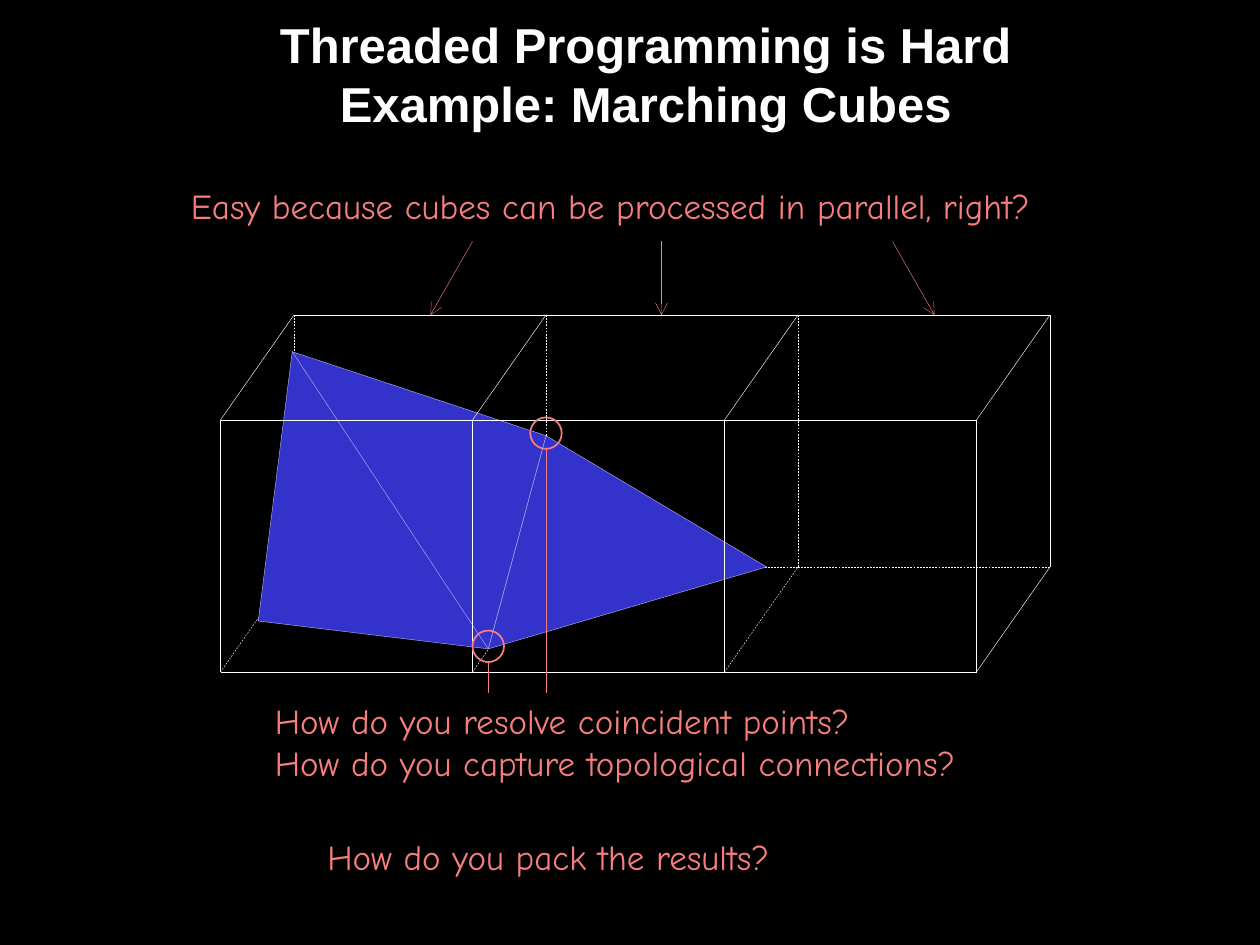
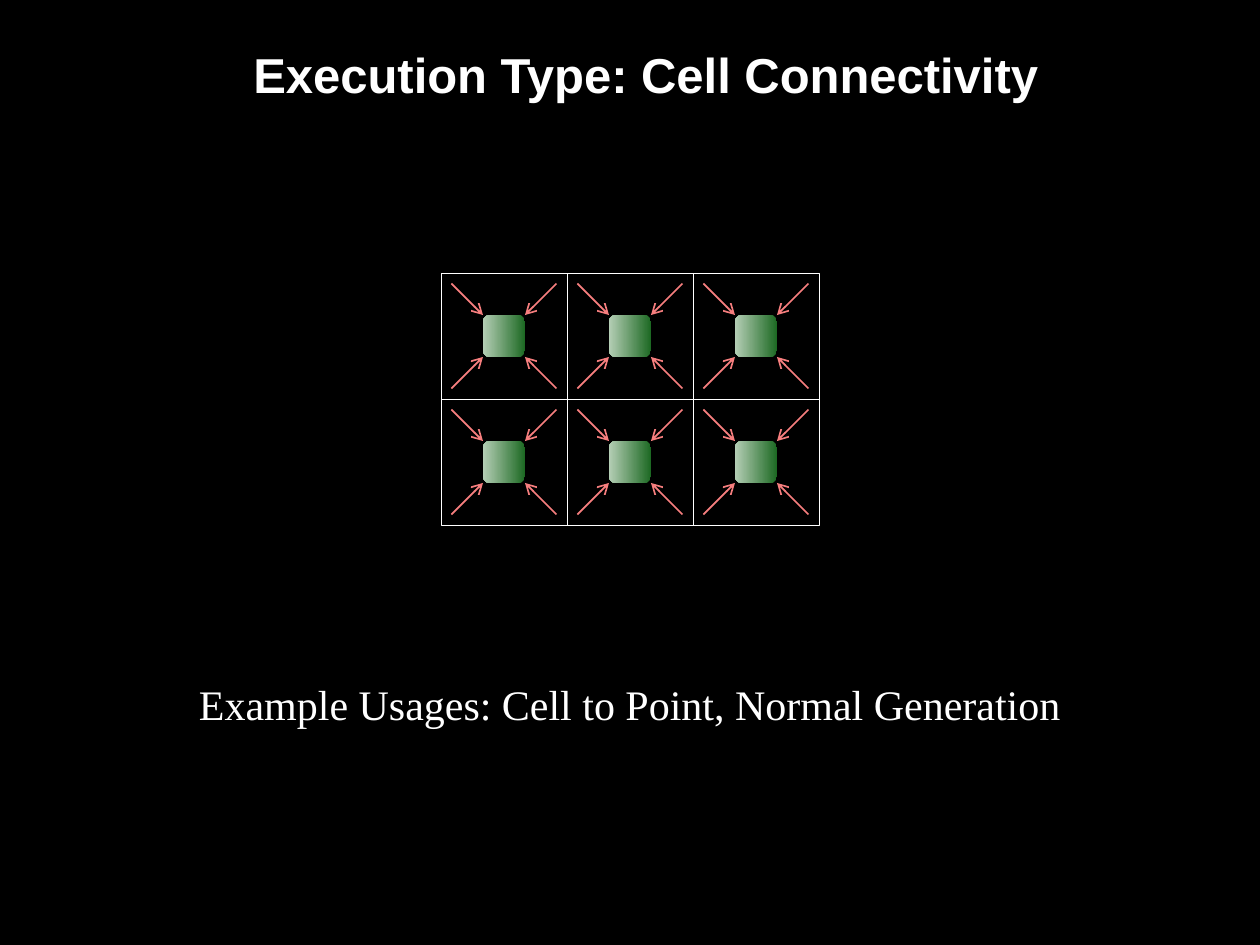
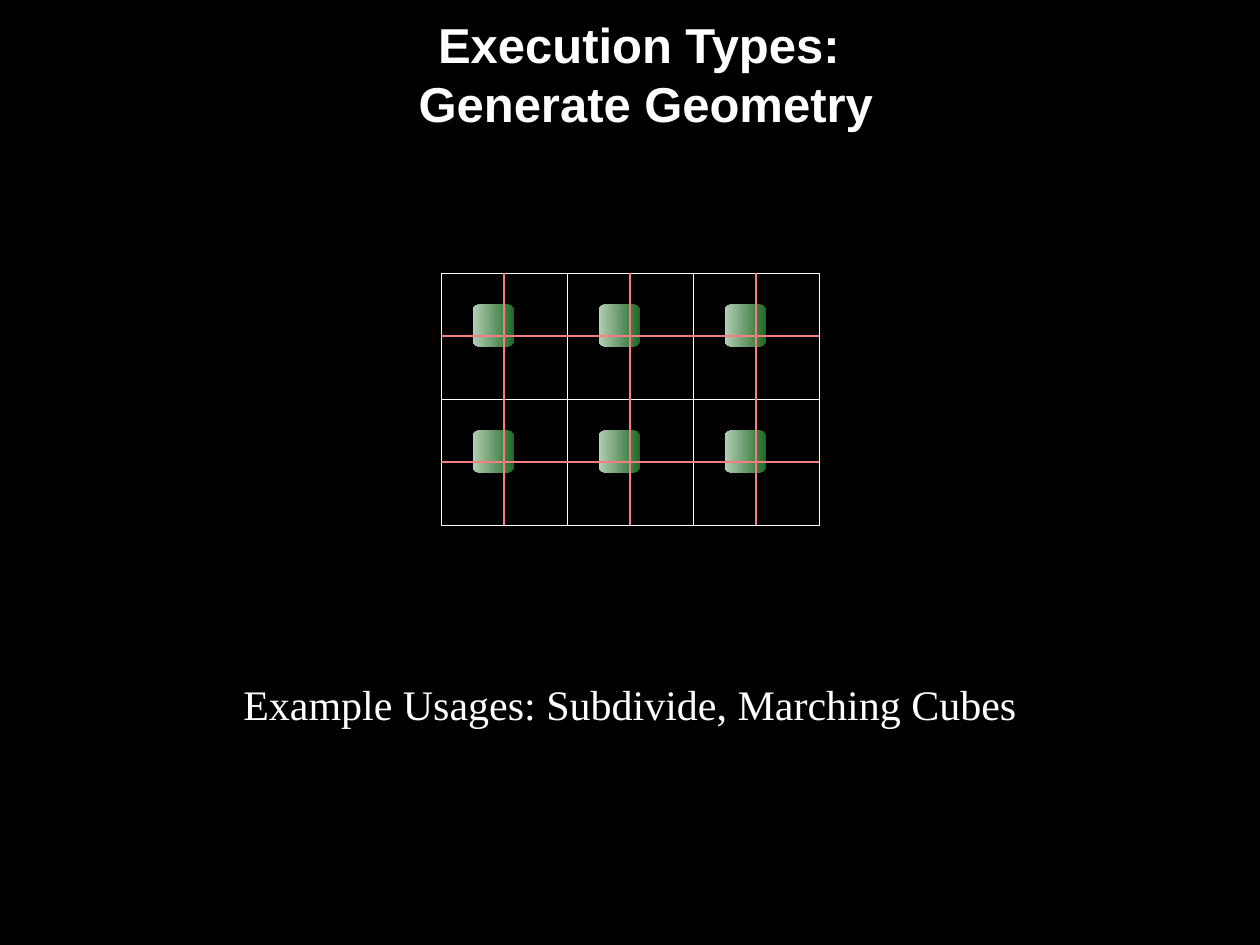
from dataclasses import dataclass
from itertools import product

from lxml import etree
from pptx import Presentation
from pptx import util as u
from pptx.dml.color import RGBColor
from pptx.enum import dml, shapes, text
from pptx.oxml import ns

SLIDE_W, SLIDE_H = u.Inches(10), u.Inches(7.5)
COLS, ROWS = 120, 90


@dataclass(frozen=True)
class Theme:
    background: str = "000000"
    ink: str = "FFFFFF"
    accent: str = "F67E7E"
    surface: str = "3333CC"
    surface_edge: str = "ADADEB"
    nucleus_dark: str = "1D6923"
    nucleus_light: str = "B4CEB5"
    title_font: str = "Arial"
    remark_font: str = "Comic Neue"
    usage_font: str = "Times New Roman"
    title_size: int = 28
    remark_size: int = 20
    usage_size: int = 24
    hairline: float = 0.25
    stroke: float = 1


THEME = Theme()


@dataclass(frozen=True)
class Box:
    col: float
    row: float
    width: float
    height: float

    def point(self, col, row):
        return (round((self.col + col) * SLIDE_W / COLS),
                round((self.row + row) * SLIDE_H / ROWS))

    def inner(self, col, row, width, height):
        return Box(self.col + col, self.row + row, width, height)

    def extent(self):
        return (*self.point(0, 0), round(self.width * SLIDE_W / COLS),
                round(self.height * SLIDE_H / ROWS))


TITLE = Box(20, 0, 83, 14)
CUBES = Box(21, 30, 79, 34)
CELLS = Box(42, 26, 36, 24)


def rgb(color):
    return RGBColor.from_string(color)


def add_xml(parent, tag, **attributes):
    return etree.SubElement(parent, ns.qn(tag), attributes)


def write(slide, box, words, *, font, size, color, bold=False, wrap=False,
          align=text.PP_ALIGN.LEFT, anchor=text.MSO_ANCHOR.TOP):
    frame = slide.shapes.add_textbox(*box.extent()).text_frame
    frame.word_wrap = wrap
    frame.auto_size = (text.MSO_AUTO_SIZE.NONE if wrap
                       else text.MSO_AUTO_SIZE.SHAPE_TO_FIT_TEXT)
    frame.vertical_anchor = anchor
    frame.text = words
    for paragraph in frame.paragraphs:
        paragraph.alignment = align
        for run in paragraph.runs:
            run.font.name, run.font.size = font, u.Pt(size)
            run.font.bold, run.font.color.rgb = bold, rgb(color)


def remark(slide, box, words):
    write(slide, box, words, font=THEME.remark_font,
          size=THEME.remark_size, color=THEME.accent)


def style_line(line, color, width):
    line.color.rgb = rgb(color)
    line.width = u.Pt(width)


def draw_line(slide, box, start, end, color=THEME.ink, width=THEME.hairline,
              dashed=False, arrow=False):
    edge = slide.shapes.add_connector(
        shapes.MSO_CONNECTOR.STRAIGHT, *box.point(*start), *box.point(*end))
    style_line(edge.line, color, width)
    if dashed:
        edge.line.dash_style = dml.MSO_LINE.DASH
    properties = edge._element.spPr
    if arrow:
        add_xml(properties.find(ns.qn("a:ln")), "a:tailEnd", type="arrow")
    add_xml(properties, "a:effectLst")


def draw_outline(slide, box, kind, color, width):
    outline = slide.shapes.add_shape(kind, *box.extent())
    outline.shadow.inherit = False
    outline.fill.background()
    style_line(outline.line, color, width)


def draw_surface(slide, box, corners):
    first, *rest = [box.point(*corner) for corner in corners]
    builder = slide.shapes.build_freeform(*first)
    builder.add_line_segments(rest, close=True)
    surface = builder.convert_to_shape()
    surface.shadow.inherit = False
    surface.fill.solid()
    surface.fill.fore_color.rgb = rgb(THEME.surface)
    style_line(surface.line, THEME.surface_edge, THEME.hairline)


def draw_nucleus(slide, box):
    nucleus = slide.shapes.add_shape(
        shapes.MSO_SHAPE.ROUNDED_RECTANGLE, *box.extent())
    nucleus.rotation = 270
    nucleus.line.fill.background()
    nucleus.fill.gradient()
    nucleus.fill.gradient_angle = 90
    for stop, color in zip(nucleus.fill.gradient_stops,
                           (THEME.nucleus_dark, THEME.nucleus_light)):
        stop.color.rgb = rgb(color)
    nucleus.shadow.inherit = False
    effects = nucleus._element.spPr.find(ns.qn("a:effectLst"))
    shadow = add_xml(effects, "a:outerShdw", blurRad=str(u.Pt(3.1)),
                     dist=str(u.Pt(1.8)), dir="5400000", rotWithShape="0")
    shade = add_xml(shadow, "a:srgbClr", val=THEME.background)
    add_xml(shade, "a:alpha", val="35000")


def start_slide(deck, title):
    slide = deck.slides.add_slide(deck.slide_layouts[6])
    slide.background.fill.solid()
    slide.background.fill.fore_color.rgb = rgb(THEME.background)
    write(slide, TITLE, title, font=THEME.title_font, size=THEME.title_size,
          color=THEME.ink, bold=True, wrap=True, align=text.PP_ALIGN.CENTER,
          anchor=text.MSO_ANCHOR.MIDDLE)
    return slide


def draw_cubes(slide, box):
    count, side, shift, rise = 3, 24, 7, 10
    upper_left, lower_left = (6.84, 3.5), (3.6, 29.15)
    shared_low, shared_high, tip = (25.5, 31.8), (31, 11.5), (52, 24)

    for i in range(count + 1):
        x, hidden = i * side, i < count
        back_low = (x + shift, side)
        draw_line(slide, box, (x + shift, 0), back_low, dashed=hidden)
        draw_line(slide, box, (x, rise + side), back_low, dashed=hidden)
        if hidden:
            for y in (0, side):
                draw_line(slide, box, (x + shift, y), (x + shift + side, y),
                          dashed=y > 0)

    draw_surface(slide, box, (shared_low, tip, shared_high))
    draw_surface(slide, box, (shared_high, upper_left, lower_left, shared_low))
    draw_line(slide, box, shared_low, upper_left, color=THEME.surface_edge)

    for i in range(count + 1):
        x = i * side
        draw_line(slide, box, (x, rise), (x, rise + side))
        draw_line(slide, box, (x, rise), (x + shift, 0))
        if i < count:
            for y in (rise, rise + side):
                draw_line(slide, box, (x, y), (x + side, y))

    ring = 3
    for col, row in (shared_low, shared_high):
        top = row - 0.25 - ring / 2
        draw_outline(slide, box.inner(col - ring / 2, top, ring, ring),
                     shapes.MSO_SHAPE.OVAL, THEME.accent, THEME.stroke)
        draw_line(slide, box, (col, top + ring), (col, box.height + 2),
                  color=THEME.accent)


def draw_parallel_claim(slide, box):
    remark(slide, box,
           "Easy because cubes can be processed in parallel, right?")
    for start, end in ((28, 24), (46, 46), (68, 72)):
        draw_line(slide, box, (start, 6), (end, 13), color=THEME.accent,
                  arrow=True)


def converge_on_cell(slide, cell):
    draw_nucleus(slide, cell.inner(4, 4, 4, 4))
    for across, down in product(((1, 4), (11, 8)), repeat=2):
        draw_line(slide, cell, (across[0], down[0]), (across[1], down[1]),
                  color=THEME.accent, width=THEME.stroke, arrow=True)


def subdivide_cell(slide, cell):
    middle = cell.width / 2
    draw_nucleus(slide, cell.inner(3, 3, 4, 4))
    for start, end in (((middle, 0), (middle, cell.height)),
                       ((0, middle), (cell.width, middle))):
        draw_line(slide, cell, start, end, color=THEME.accent,
                  width=THEME.stroke)


def draw_cells(slide, box, fill_cell):
    side = box.width / 3
    cells = [box.inner(col * side, row * side, side, side)
             for col, row in product(range(3), range(2))]
    for cell in cells:
        draw_outline(slide, cell, shapes.MSO_SHAPE.RECTANGLE, THEME.ink,
                     THEME.hairline)
    for cell in cells:
        fill_cell(slide, cell)


def marching_cubes_slide(deck):
    slide = start_slide(
        deck, "Threaded Programming is Hard\vExample: Marching Cubes")
    draw_cubes(slide, CUBES)
    draw_parallel_claim(slide, Box(17, 17, 88.8, 5.3))
    remark(slide, Box(25, 66, 72, 9.3),
           "How do you resolve coincident points?\n"
           "How do you capture topological connections?")
    remark(slide, Box(30, 79, 48.4, 5.3), "How do you pack the results?")


def execution_slide(deck, title, usages, usages_width, fill_cell):
    slide = start_slide(deck, title)
    draw_cells(slide, CELLS, fill_cell)
    write(slide, Box((COLS - usages_width) / 2, 64, usages_width, 6),
          f"Example Usages: {usages}", font=THEME.usage_font,
          size=THEME.usage_size, color=THEME.ink, align=text.PP_ALIGN.CENTER)


def main():
    deck = Presentation()
    deck.slide_width, deck.slide_height = SLIDE_W, SLIDE_H
    marching_cubes_slide(deck)
    execution_slide(deck, "Execution Type: Cell Connectivity",
                    "Cell to Point, Normal Generation", 86.9, converge_on_cell)
    execution_slide(deck, "Execution Types: \vGenerate Geometry",
                    "Subdivide, Marching Cubes", 76.8, subdivide_cell)
    deck.save("out.pptx")


if __name__ == "__main__":
    main()
